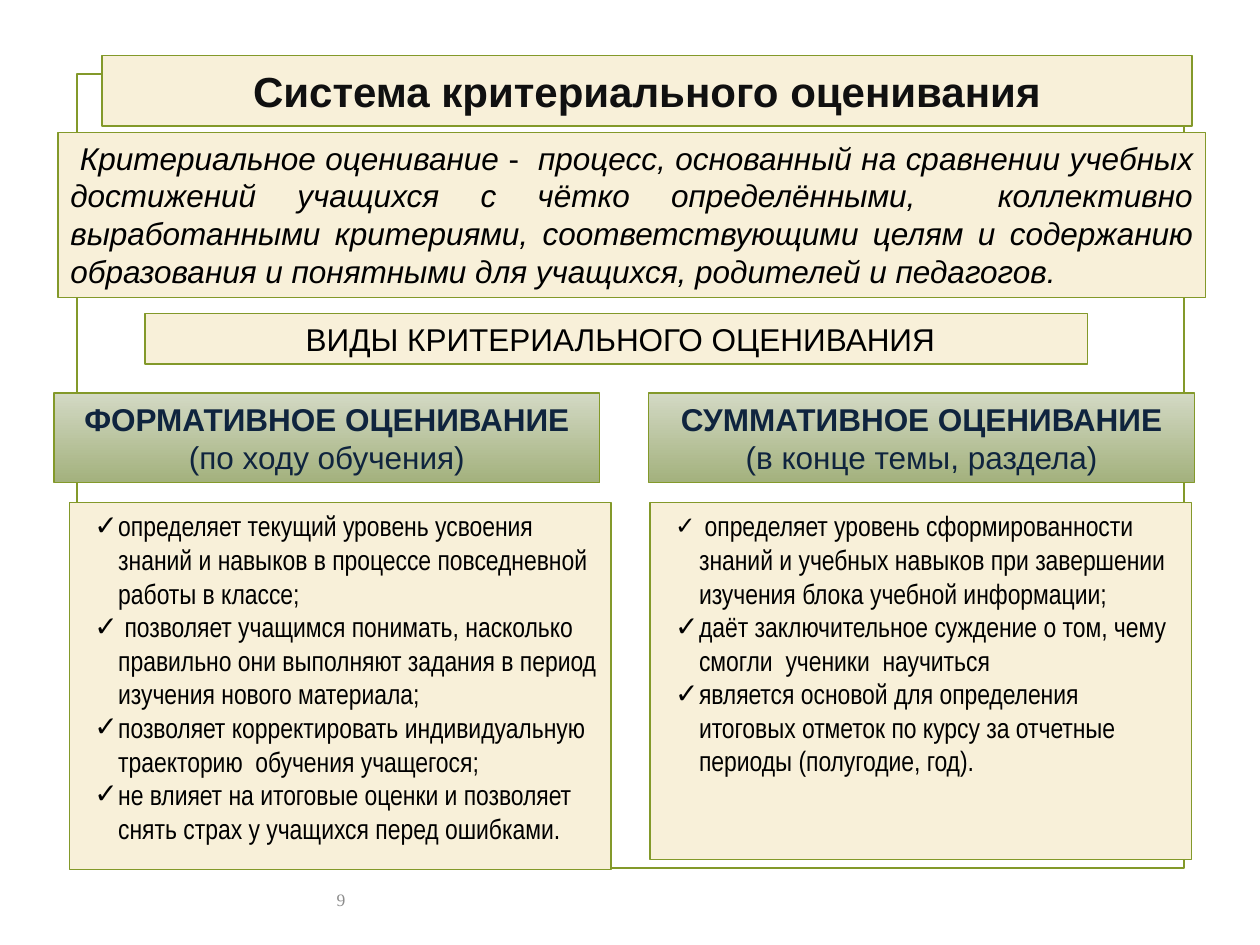
from dataclasses import dataclass
from typing import Optional

from lxml.etree import SubElement
from pptx import Presentation
from pptx.dml.color import RGBColor
from pptx.enum.shapes import MSO_SHAPE as Shape
from pptx.enum.text import MSO_ANCHOR as Anchor, MSO_AUTO_SIZE as AutoSize, PP_ALIGN as Align
from pptx.oxml.ns import qn
from pptx.util import Emu, Pt

EMU_PER_PX = 9144  # 100 px to the inch
CREAM, GREEN, BLACK, NAVY = "F8F0D9", "83992A", "000000", "0F243E"
GRADIENT = ("D3D9C4", "A3B17D")


@dataclass(frozen=True)
class Area:
    left: int
    top: int
    width: int
    height: int


@dataclass(frozen=True)
class Piece:
    """A stretch of text; unset fields follow the box's format."""
    text: str
    size: Optional[int] = None
    bold: Optional[bool] = None
    italic: Optional[bool] = None


@dataclass(frozen=True)
class Kind:
    """One kind of assessment: a heading band above a checklist."""
    heading: str
    note: str
    band: Area
    list_area: Area
    items: list


def px(length: int) -> Emu:
    return Emu(length * EMU_PER_PX)


def rgb(color: str) -> RGBColor:
    return RGBColor.from_string(color)


def place(shape, area: Area) -> None:
    shape.left, shape.top = px(area.left), px(area.top)
    shape.width, shape.height = px(area.width), px(area.height)


def paint(shape, fill: Optional[str] = CREAM, line_width: float = 0.75) -> None:
    if fill:
        shape.fill.solid()
        shape.fill.fore_color.rgb = rgb(fill)
    else:
        shape.fill.background()
    shape.line.color.rgb = rgb(GREEN)
    shape.line.width = Pt(line_width)


def paint_gradient(shape) -> None:
    shape.fill.gradient()
    shape.fill.gradient_angle = 270
    for stop, position, color in zip(shape.fill.gradient_stops, (0, 1), GRADIENT):
        stop.position = position
        stop.color.rgb = rgb(color)


def add_box(page, area: Area, fill: Optional[str] = CREAM, line_width: float = 0.75):
    box = page.shapes.add_shape(Shape.RECTANGLE, 0, 0, 0, 0)
    place(box, area)
    box.shadow.inherit = False
    paint(box, fill, line_width)
    return box


def add_check_bullet(para) -> None:
    properties = para._p.get_or_add_pPr()
    properties.set("marL", str(px(29)))
    properties.set("indent", str(px(-19)))
    SubElement(properties, qn("a:buFont"), typeface="Arial")
    SubElement(properties, qn("a:buChar"), char="✓")


def write(shape, paragraphs: list, *, size: int = 18, font: str = "Arial",
          color: str = BLACK, bold: bool = False, italic: bool = False,
          align=Align.CENTER, anchor=Anchor.TOP, bullets: bool = False) -> None:
    """Fill a shape with paragraphs, each a list of pieces."""
    frame = shape.text_frame
    frame.word_wrap = True
    frame.auto_size = AutoSize.NONE
    frame.vertical_anchor = anchor
    for index, pieces in enumerate(paragraphs):
        para = frame.add_paragraph() if index else frame.paragraphs[0]
        para.alignment = align
        if bullets:
            add_check_bullet(para)
        for piece in pieces:
            span = para.add_run()
            span.text = piece.text
            span.font.name = font
            span.font.size = Pt(piece.size or size)
            span.font.bold = bold if piece.bold is None else piece.bold
            span.font.italic = italic if piece.italic is None else piece.italic
            span.font.color.rgb = rgb(color)


def add_kind(page, kind: Kind) -> None:
    checklist = add_box(page, kind.list_area)
    write(checklist, kind.items, size=16, font="Arial Narrow",
          align=Align.LEFT, bullets=True)
    band = add_box(page, kind.band)
    paint_gradient(band)
    write(band, [[Piece(kind.heading, bold=True)], [Piece(kind.note)]],
          color=NAVY, anchor=Anchor.MIDDLE)


KINDS = [
    Kind("СУММАТИВНОЕ ОЦЕНИВАНИЕ", "(в конце темы, раздела)",
         Area(515, 312, 433, 71), Area(516, 399, 430, 283), [
             [Piece(" ", size=14),
              Piece("определяет уровень сформированности знаний и учебных навыков "
                    "при завершении изучения блока учебной информации;")],
             [Piece("даёт заключительное суждение о том, чему смогли  ученики  научиться")],
             [Piece("является основой для определения итоговых отметок по курсу "
                    "за отчетные периоды (полугодие, год).")],
         ]),
    Kind("ФОРМАТИВНОЕ ОЦЕНИВАНИЕ", "(по ходу обучения)",
         Area(43, 312, 433, 71), Area(55, 399, 430, 291), [
             [Piece("определяет текущий уровень усвоения знаний и навыков "
                    "в процессе повседневной работы в классе;")],
             [Piece(" позволяет учащимся понимать, насколько правильно они выполняют "
                    "задания в период изучения нового материала;")],
             [Piece("позволяет корректировать индивидуальную траекторию  "
                    "обучения учащегося;")],
             [Piece("не влияет на итоговые оценки и позволяет снять страх "
                    "у учащихся перед ошибками.")],
         ]),
]

DEFINITION = [
    Piece(" Критериальное оценивание "),
    Piece("-  ", italic=False),
    Piece("процесс, основанный на сравнении учебных достижений учащихся с чётко "
          "определёнными,  коллективно выработанными критериями, соответствующими "
          "целям и содержанию образования и понятными для учащихся, родителей "
          "и педагогов."),
]


def main() -> None:
    deck = Presentation()
    deck.slide_width, deck.slide_height = px(1000), px(750)
    page = deck.slides.add_slide(deck.slide_layouts[5])

    title = page.shapes.title
    place(title, Area(81, 44, 865, 56))
    paint(title)
    write(title, [[Piece("Система критериального оценивания")]],
          size=24, color="101010", bold=True, anchor=Anchor.MIDDLE)

    border = add_box(page, Area(61, 59, 879, 630), fill=None, line_width=1.25)
    title._element.addprevious(border._element)  # the border lies behind the title

    number = page.shapes.add_textbox(0, 0, 0, 0)
    place(number, Area(67, 694, 217, 40))
    write(number, [[Piece("9")]], size=10, font="Times New Roman", color="8C8C8C",
          align=Align.RIGHT, anchor=Anchor.MIDDLE)

    for kind in KINDS:
        add_kind(page, kind)

    write(add_box(page, Area(115, 249, 748, 40)),
          [[Piece(" ВИДЫ КРИТЕРИАЛЬНОГО ОЦЕНИВАНИЯ")]])
    write(add_box(page, Area(46, 105, 911, 131)), [DEFINITION],
          italic=True, align=Align.JUSTIFY)

    deck.save("out.pptx")


if __name__ == "__main__":
    main()
